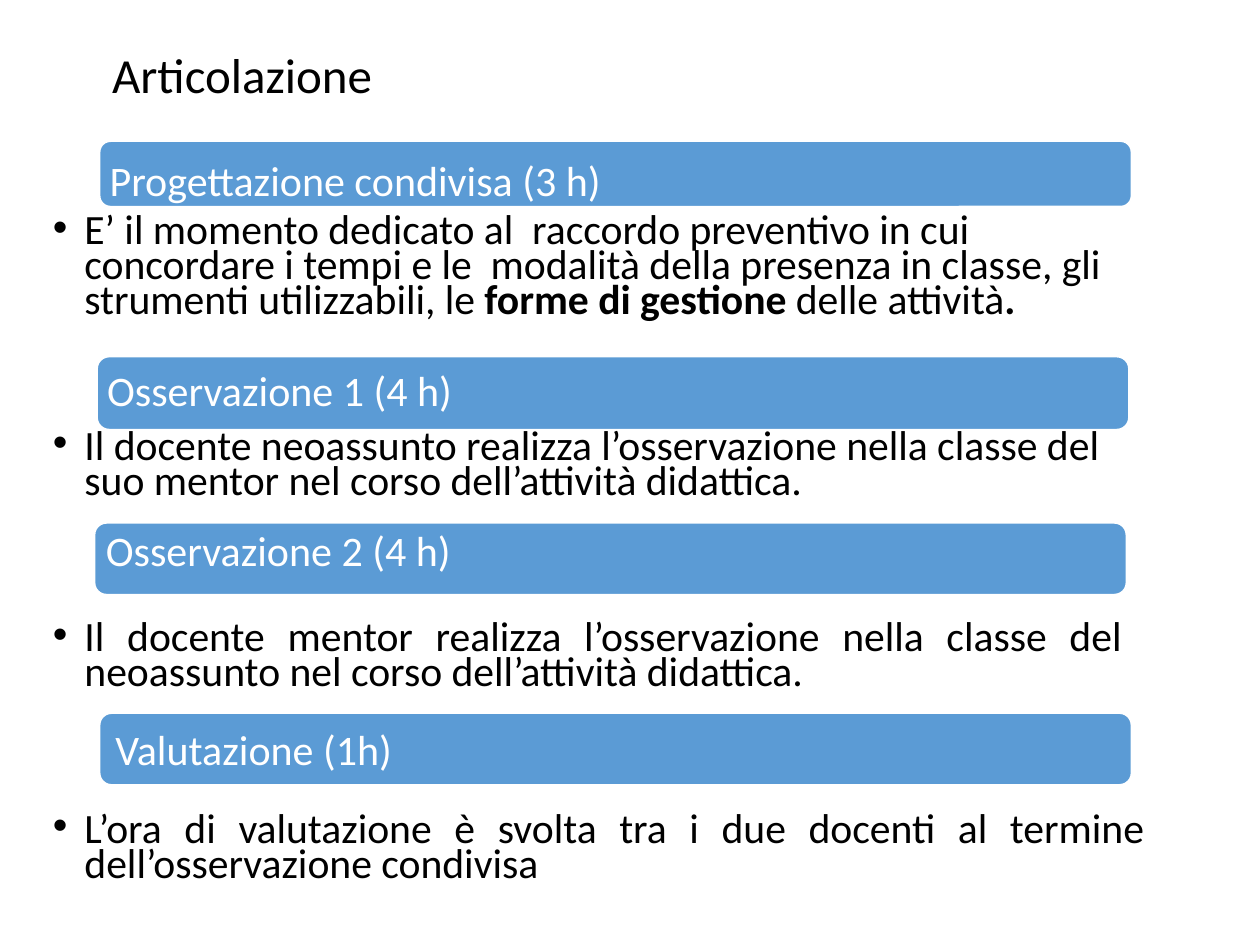
import pptx
import pptx.util
import pptx.dml.color
import pptx.enum.shapes
import pptx.enum.text

COLORS = {"bar": "5B9BD5", "white": "FFFFFF", "text": "000000"}
FONT = "Calibri"
SLIDE_SIZE = (10, 7.5)
TITLE = "Articolazione"
TITLE_BOX = (0.79, 0.3, 8.19, 0.57)
BODY_BOX = (0.32, 1.67, 8.86, 5.53)
BAR_WIDTH = 8.19

BARS = [
    {"text": "Progettazione condivisa (3 h)", "at": (0.79, 1.12), "height": 0.52,
     "label": (0.81, 1.27, 8.15, 0.36), "inset": 0.06},
    {"text": "Osservazione 1 (4 h)", "at": (0.77, 2.83), "height": 0.58,
     "label": (0.79, 2.86, 8.15, 0.52), "inset": 0.06},
    {"text": "Osservazione 2 (4 h)", "at": (0.75, 4.15), "height": 0.57,
     "label": (0.79, 4.17, 8.13, 0.44), "inset": 0.05},
    {"text": "Valutazione (1h)", "at": (0.79, 5.66), "height": 0.57},
]

LEFT = pptx.enum.text.PP_ALIGN.LEFT
JUSTIFY = pptx.enum.text.PP_ALIGN.JUSTIFY
BULLETS = [
    (0, LEFT, [
        ("E’ il momento dedicato al  raccordo preventivo in cui concordare i tempi e le  "
         "modalità della presenza in classe, gli strumenti utilizzabili, le ", False),
        ("forme di gestione ", True), ("delle attività", False), (".", True)]),
    (63, LEFT, [("Il docente neoassunto realizza l’osservazione nella classe del suo mentor "
                 "nel corso dell’attività didattica.", False)]),
    (69.5, JUSTIFY, [("Il docente mentor realizza l’osservazione nella classe del  neoassunto "
                      "nel corso dell’attività didattica.", False)]),
    (69.5, JUSTIFY, [("L’ora di valutazione è svolta tra i due docenti al termine "
                      "dell’osservazione condivisa", False)]),
]


def inches(values):
    return [pptx.util.Inches(value) for value in values]


def rgb(name):
    return pptx.dml.color.RGBColor.from_string(COLORS[name])


def place(shape, box):
    shape.left, shape.top, shape.width, shape.height = inches(box)


def style(paragraph, size, color, alignment=LEFT):
    paragraph.alignment = alignment
    paragraph.font.name = FONT
    paragraph.font.size = pptx.util.Pt(size)
    paragraph.font.color.rgb = rgb(color)


def write_label(shape, text):
    frame = shape.text_frame
    frame.word_wrap = True
    frame.vertical_anchor = pptx.enum.text.MSO_ANCHOR.MIDDLE
    paragraph = frame.paragraphs[0]
    paragraph.text = text
    style(paragraph, 24, "white")
    return frame


def add_bar(shapes, bar):
    shape = shapes.add_shape(pptx.enum.shapes.MSO_SHAPE.ROUNDED_RECTANGLE,
                             *inches((*bar["at"], BAR_WIDTH, bar["height"])))
    shape.shadow.inherit = False
    shape.fill.solid()
    shape.fill.fore_color.rgb = rgb("bar")
    shape.line.color.rgb = rgb("white")
    shape.line.width = pptx.util.Pt(1)
    return shape


def add_section(slide, bar):
    if "label" not in bar:
        write_label(add_bar(slide.shapes, bar), bar["text"])
        return
    group = slide.shapes.add_group_shape()
    add_bar(group.shapes, bar)
    frame = write_label(group.shapes.add_textbox(*inches(bar["label"])), bar["text"])
    frame.paragraphs[0].line_spacing = 0.9
    inset = pptx.util.Inches(bar["inset"])
    frame.margin_left = frame.margin_right = inset
    frame.margin_top = frame.margin_bottom = inset


def fill_title(title):
    place(title, TITLE_BOX)
    title.text_frame.text = TITLE
    title.text_frame.vertical_anchor = pptx.enum.text.MSO_ANCHOR.MIDDLE
    style(title.text_frame.paragraphs[0], 28, "text")


def fill_body(body):
    place(body, BODY_BOX)
    frame = body.text_frame
    frame.auto_size = pptx.enum.text.MSO_AUTO_SIZE.NONE
    for index, (gap, alignment, runs) in enumerate(BULLETS):
        paragraph = frame.add_paragraph() if index else frame.paragraphs[0]
        style(paragraph, 23.8, "text", alignment)
        paragraph.line_spacing = 0.7
        paragraph.space_before = pptx.util.Pt(gap)
        properties = paragraph._p.get_or_add_pPr()
        indent = pptx.util.Inches(0.25)
        properties.set("marL", str(indent))
        properties.set("indent", str(-indent))
        for text, bold in runs:
            run = paragraph.add_run()
            run.text = text
            run.font.bold = bold


def main():
    presentation = pptx.Presentation()
    presentation.slide_width, presentation.slide_height = inches(SLIDE_SIZE)
    slide = presentation.slides.add_slide(presentation.slide_layouts[1])
    fill_title(slide.shapes.title)
    fill_body(slide.placeholders[1])
    for bar in BARS:
        add_section(slide, bar)
    presentation.save("out.pptx")


if __name__ == "__main__":
    main()
